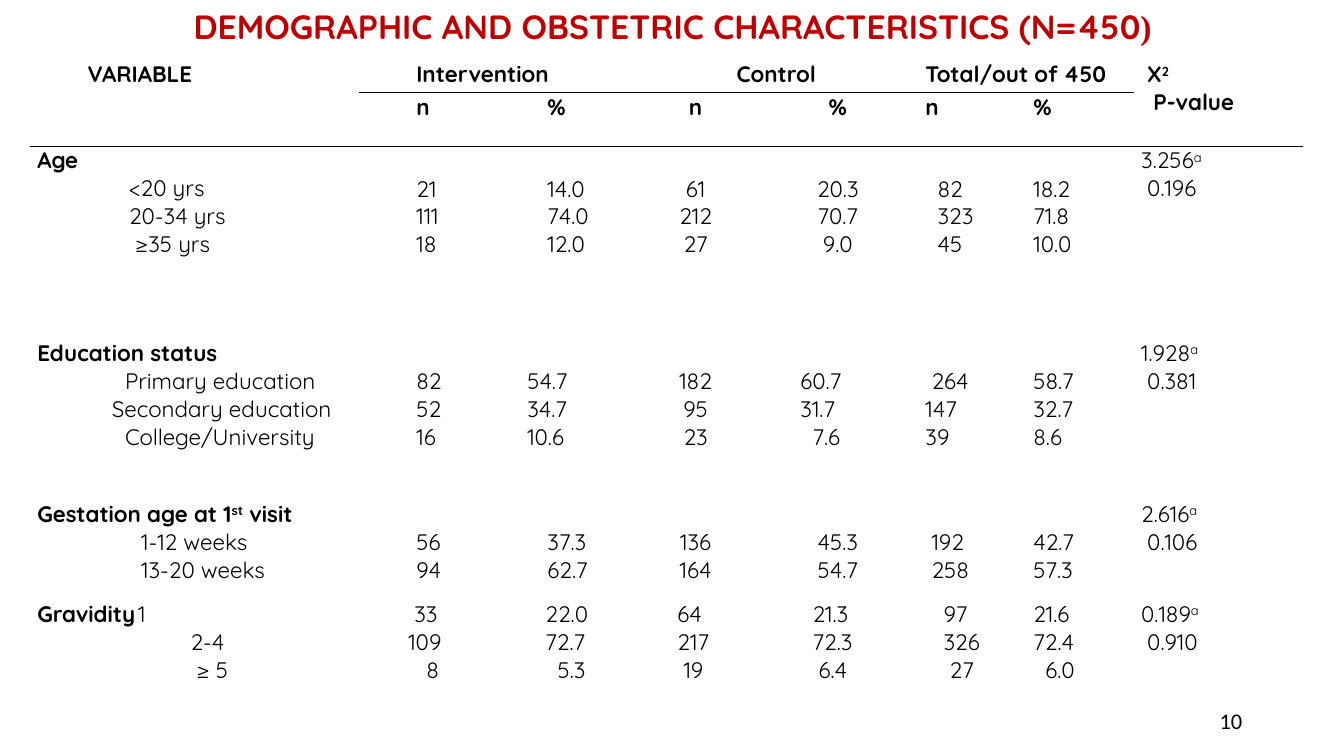
from lxml import etree
from pptx import Presentation
from pptx.dml.color import RGBColor
from pptx.enum.text import MSO_ANCHOR as Anchor, PP_ALIGN as Align
from pptx.oxml.ns import qn
from pptx.util import Inches, Pt

COLORS = {"title": "C00000", "text": "000000"}
FONT = "Quicksand"
TITLE = [("DEMOGRAPHIC AND OBSTETRIC CHARACTERISTICS (N=450", {}), (")", {"font": "Times New Roman"})]
PAGE_NUMBER = "10"
BOLD, RAISED = {"bold": True}, {"raised": True}
CENTER = "center"
LINE = 0.28
GRAVIDITY_TAB = 1.45

COLUMN_WIDTHS = [3.26, 1.3, 1.43, 1.22, 1.6, 1.07, 1.07, 1.67]
ROW_HEIGHTS = [0.32, 0.32, 1.91, 1.6, 0.99, 1.77]
MERGES = [(0, 0, 1, 0), (0, 1, 0, 2), (0, 3, 0, 4), (0, 5, 0, 6), (0, 7, 1, 7)]

HEADER = {
    (0, 0): (["VARIABLE"], 0.5),
    (0, 1): (["Intervention"], 0.5),
    (0, 3): (["Control"], CENTER),
    (0, 5): (["Total/out of 450"], 0),
    (0, 7): ([[("X", {}), ("2", RAISED)], "P-value"], [0.06, 0.12]),
    (1, 1): (["n"], 0.5),
    (1, 2): (["%"], 0.5),
    (1, 3): (["n"], CENTER),
    (1, 4): (["%"], CENTER),
    (1, 5): (["n"], 0),
    (1, 6): (["%"], 0),
}

GROUPS = [
    {
        "labels": ([[("Age", BOLD)], "<20 yrs", "20-34 yrs", "≥35 yrs"], [0, 0.91, 0.91, 0.97]),
        "values": [
            (["21", "111", "18"], 0.5),
            (["14.0", "74.0", "12.0"], 0.5),
            (["61", "212", "27"], CENTER),
            (["20.3", "70.7", "9.0"], CENTER),
            (["82", "323", "45"], 0.12),
            (["18.2", "71.8", "10.0"], 0),
        ],
        "test": ("3.256", "0.196"),
    },
    {
        "labels": (
            [[("Education status", BOLD)], "Primary education", "Secondary education", "College/University"],
            [0, 0.87, 0.74, 0.87],
        ),
        "values": [
            (["82", "52", "16"], 0.5),
            (["54.7", "34.7", "10.6"], 0.3),
            (["182", "95", "23"], CENTER),
            (["60.7", "31.7", "7.6"], [0.36, 0.36, 0.48]),
            (["264", "147", "39"], [0.06, 0, 0]),
            (["58.7", "32.7", "8.6"], 0),
        ],
        "test": ("1.928", "0.381"),
    },
    {
        "labels": (
            [
                [("Gestation age at 1", BOLD), ("st", BOLD | RAISED), (" visit", BOLD)],
                "1-12 weeks",
                "13-20 weeks",
            ],
            [0, 1.03, 1.03],
        ),
        "values": [
            (["56", "94"], 0.5),
            (["37.3", "62.7"], 0.5),
            (["136", "164"], CENTER),
            (["45.3", "54.7"], CENTER),
            (["192", "258"], 0.06),
            (["42.7", "57.3"], 0),
        ],
        "test": ("2.616", "0.106"),
    },
    {
        "labels": ([[("Gravidity", BOLD), ("\t1", {})], "2-4", "≥ 5"], [0, 1.52, 1.58]),
        "values": [
            (["33", "109", "8"], [0.48, 0.42, 0.6]),
            (["22.0", "72.7", "5.3"], [0.48, 0.48, 0.6]),
            (["64", "217", "19"], [0.36, 0.36, 0.42]),
            (["21.3", "72.3", "6.4"], [0.48, 0.48, 0.54]),
            (["97", "326", "27"], [0.18, 0.18, 0.24]),
            (["21.6", "72.4", "6.0"], [0, 0, 0.12]),
        ],
        "test": ("0.189", "0.910"),
        "starts_at_top": True,
    },
]


def add_text(paragraph, text, font=FONT, size=16, color="text", bold=False, raised=False):
    run = paragraph.add_run()
    run.text = text
    run.font.name = font
    run.font.size = Pt(size)
    run.font.bold = bold
    run.font.color.rgb = RGBColor.from_string(COLORS[color])
    if raised:
        run.font._element.set("baseline", "30000")


def fill_cell(cell, lines, indent=0, top=0, bold=False):
    cell.margin_top = Inches(top)
    indents = indent if isinstance(indent, list) else [indent] * len(lines)
    frame = cell.text_frame
    for index, (line, left) in enumerate(zip(lines, indents)):
        paragraph = frame.add_paragraph() if index else frame.paragraphs[0]
        paragraph.alignment = Align.CENTER if left == CENTER else Align.LEFT
        properties = paragraph._p.get_or_add_pPr()
        if left != CENTER:
            properties.set("marL", str(Inches(left)))
            properties.set("indent", "0")
        for text, style in [(line, {})] if isinstance(line, str) else line:
            if "\t" in text:
                stops = etree.SubElement(properties, qn("a:tabLst"))
                etree.SubElement(stops, qn("a:tab"), pos=str(Inches(GRAVIDITY_TAB)), algn="l")
            add_text(paragraph, text, **({"bold": bold} | style))


def style_cell(cell, black_sides):
    cell.margin_left = cell.margin_right = Inches(0.07)
    cell.margin_top = cell.margin_bottom = 0
    properties = cell._tc.get_or_add_tcPr()
    for side in "LRTB":
        border = etree.SubElement(properties, qn("a:ln" + side), w=str(Pt(1)))
        if side in black_sides:
            fill = etree.SubElement(border, qn("a:solidFill"))
            etree.SubElement(fill, qn("a:srgbClr"), val=COLORS["text"])
        else:
            etree.SubElement(border, qn("a:noFill"))
    cell.fill.background()


def black_sides(row, column):
    spans_header = column in (0, 7)
    top = row == 2 or (row == 1 and not spans_header)
    bottom = row in (0, 1, len(ROW_HEIGHTS) - 1)
    return "T" * top + "B" * bottom


def add_table(slide):
    box = [Inches(value) for value in (0.3, 0.6, sum(COLUMN_WIDTHS), sum(ROW_HEIGHTS))]
    table = slide.shapes.add_table(len(ROW_HEIGHTS), len(COLUMN_WIDTHS), *box).table
    table.first_row = table.horz_banding = False
    for column, width in zip(table.columns, COLUMN_WIDTHS):
        column.width = Inches(width)
    for row, height in zip(table.rows, ROW_HEIGHTS):
        row.height = Inches(height)
    for row in range(len(ROW_HEIGHTS)):
        for column in range(len(COLUMN_WIDTHS)):
            style_cell(table.cell(row, column), black_sides(row, column))
    for top, left, bottom, right in MERGES:
        table.cell(top, left).merge(table.cell(bottom, right))
    for position, (lines, indent) in HEADER.items():
        fill_cell(table.cell(*position), lines, indent, bold=True)
    for row, group in enumerate(GROUPS, start=2):
        fill_cell(table.cell(row, 0), *group["labels"])
        gap = 0 if group.get("starts_at_top") else LINE
        for column, (values, indent) in enumerate(group["values"], start=1):
            fill_cell(table.cell(row, column), values, indent, gap)
        chi_square, p_value = group["test"]
        fill_cell(table.cell(row, 7), [[(chi_square, {}), ("a", RAISED)], p_value], [0, 0.06])


def add_box(slide, box, runs, alignment, **style):
    frame = slide.shapes.add_textbox(*[Inches(value) for value in box]).text_frame
    frame.word_wrap = True
    frame.vertical_anchor = Anchor.MIDDLE
    paragraph = frame.paragraphs[0]
    paragraph.alignment = alignment
    for text, extra in runs:
        add_text(paragraph, text, **(style | extra))
    return paragraph


def main():
    """Build the slide of demographic and obstetric characteristics."""
    presentation = Presentation()
    presentation.slide_width, presentation.slide_height = Inches(13.33), Inches(7.5)
    slide = presentation.slides.add_slide(presentation.slide_layouts[6])
    title = add_box(slide, (0.92, 0, 11.5, 0.56), TITLE, Align.CENTER, size=24, color="title", bold=True)
    title.line_spacing = 0.9
    add_table(slide)
    add_box(slide, (9.42, 6.95, 3, 0.4), [(PAGE_NUMBER, {})], Align.RIGHT, font="Calibri")
    presentation.save("out.pptx")


if __name__ == "__main__":
    main()
